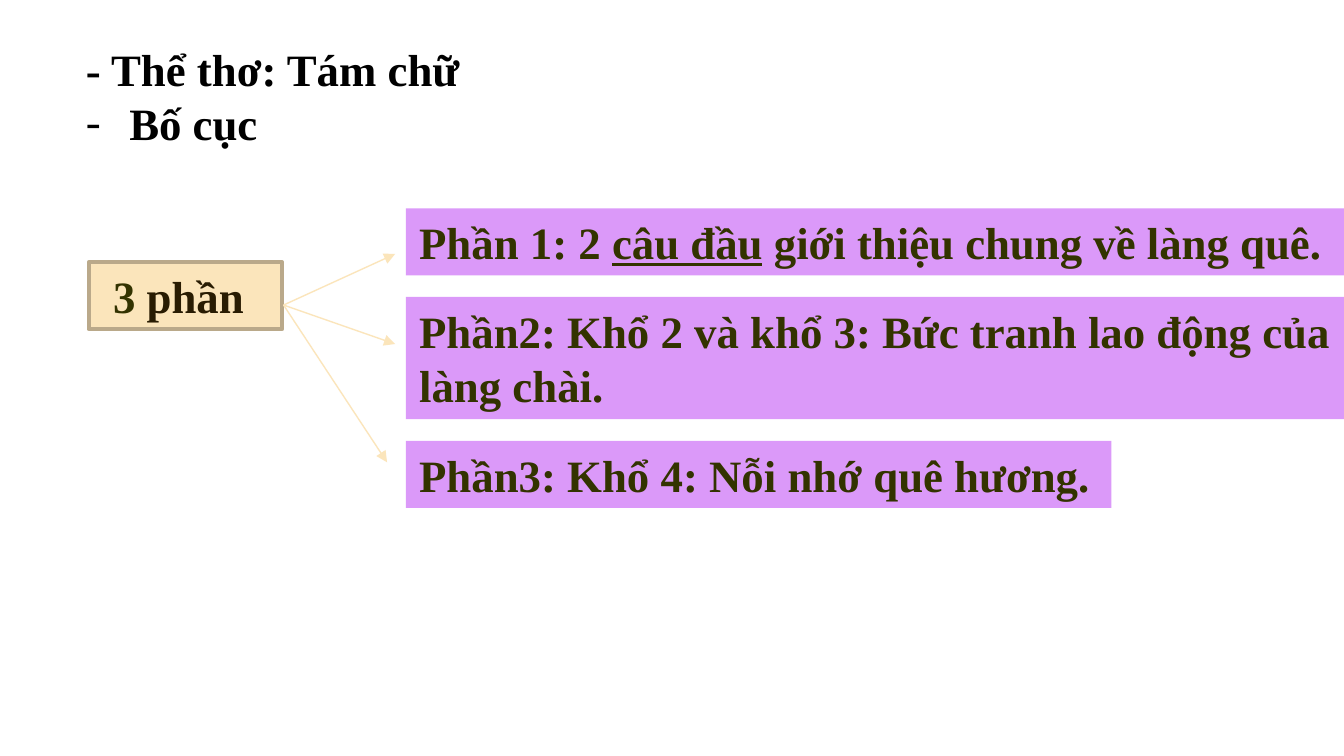
from lxml import etree
from pptx import Presentation
from pptx.dml.color import RGBColor
from pptx.enum.shapes import MSO_CONNECTOR, MSO_SHAPE
from pptx.enum.text import MSO_ANCHOR, PP_ALIGN
from pptx.oxml.ns import qn
from pptx.util import Inches, Pt

RECT = MSO_SHAPE.RECTANGLE
LINE = MSO_CONNECTOR.STRAIGHT
TOP, LEFT = MSO_ANCHOR.TOP, PP_ALIGN.LEFT

WIDE = 10
HIGH = WIDE * 9 / 16
FONT, SIZE = "Times New Roman", 24
HUES = {"black": "000000", "white": "FFFFFF", "olive": "333300",
        "brown": "291C02", "cream": "FBE5BB", "tan": "BAA98A",
        "violet": "DB99F9"}

HEAD = [[("- Thể thơ: Tám chữ", "black", False)],
        [(" Bố cục", "black", False)]]
ROOT = [[(" ", "white", False), ("3", "olive", False), (" phần", "brown", False)]]
PARTS = [
    ([("Phần 1: 2 ", "olive", False), ("câu đầu", "olive", True),
      (" giới thiệu chung về làng quê.", "olive", False)], 1, 6.98, (2.94, 1.89)),
    ([("Phần2: Khổ 2 và khổ 3: Bức tranh lao động của làng chài.", "olive", False)],
     2, 6.98, (2.94, 2.56)),
    ([("Phần3: Khổ 4: Nỗi nhớ quê hương.", "olive", False)], 1, 5.25, (2.88, 3.44)),
]
PART_X, PART_Y, GAP = 3.02, 1.55, 0.16
ROW, PAD = 0.41, 0.09
START = (2.11, 2.27)


def color(name):
    return RGBColor.from_string(HUES[name])


def write(shape, paras, size=SIZE, font=FONT, bold=True):
    frame = shape.text_frame
    frame.word_wrap = True
    frame.vertical_anchor = TOP
    for i, runs in enumerate(paras):
        para = frame.paragraphs[0] if i == 0 else frame.add_paragraph()
        para.alignment = LEFT
        for text, hue, under in runs:
            run = para.add_run()
            run.text = text
            run.font.name, run.font.size = font, Pt(size)
            run.font.bold, run.font.underline = bold, under
            run.font.color.rgb = color(hue)
    return frame


def dash(para, indent):
    props = para._p.get_or_add_pPr()
    props.set("marL", str(Inches(indent)))
    props.set("indent", str(-Inches(indent)))
    hue = etree.SubElement(props, qn("a:buClr"))
    etree.SubElement(hue, qn("a:srgbClr"), val=HUES["black"])
    etree.SubElement(props, qn("a:buFont"), typeface=FONT)
    etree.SubElement(props, qn("a:buChar"), char="-")


def box(slide, x, y, w, h, fill, edge=None):
    shape = slide.shapes.add_shape(RECT, Inches(x), Inches(y), Inches(w), Inches(h))
    shape.shadow.inherit = False
    shape.fill.solid()
    shape.fill.fore_color.rgb = color(fill)
    if edge:
        shape.line.color.rgb = color(edge)
        shape.line.width = Pt(2)
    else:
        shape.line.fill.background()
    return shape


def arrow(slide, start, end):
    link = slide.shapes.add_connector(LINE, *[Inches(v) for v in start + end])
    link.line.color.rgb = color("cream")
    link.line.width = Pt(0.75)
    etree.SubElement(link.line._get_or_add_ln(), qn("a:tailEnd"), type="triangle")
    etree.SubElement(link._element.spPr, qn("a:effectLst"))


def main():
    deck = Presentation()
    deck.slide_width, deck.slide_height = Inches(WIDE), Inches(HIGH)
    slide = deck.slides.add_slide(deck.slide_layouts[6])

    head = slide.shapes.add_textbox(Inches(0.54), Inches(0.26), Inches(9.28), Inches(0.91))
    dash(write(head, HEAD).paragraphs[1], 0.24)

    write(box(slide, 0.66, 1.95, 1.44, ROW + PAD, "cream", "tan"), ROOT)

    y = PART_Y
    for runs, rows, width, tip in PARTS:
        tall = rows * ROW + PAD
        write(box(slide, PART_X, y, width, tall, "violet"), [runs])
        arrow(slide, START, tip)
        y += tall + GAP

    deck.save("out.pptx")


if __name__ == "__main__":
    main()
